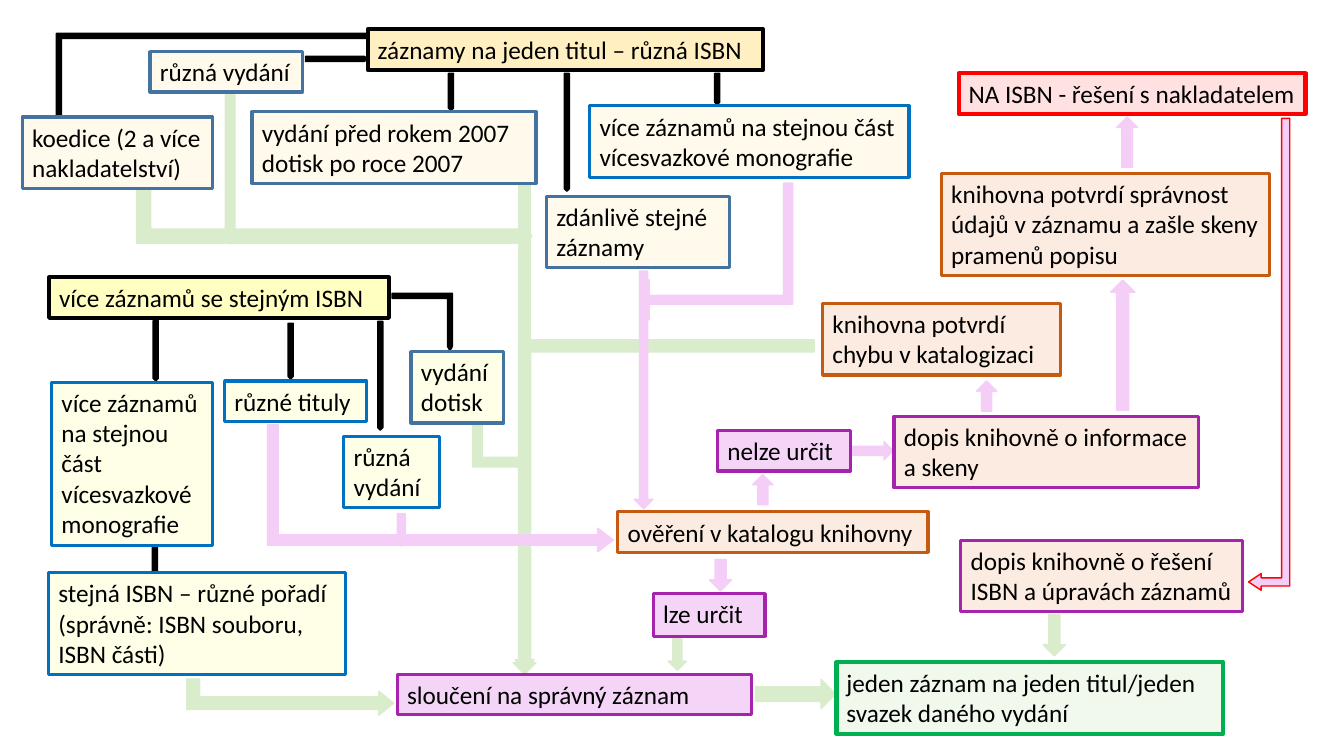
import pptx
import pptx.dml.color
import pptx.enum.shapes
import pptx.enum.text
import pptx.util

Cm = pptx.util.Cm
PRESET = pptx.enum.shapes.MSO_SHAPE
UP, DOWN, RIGHT = PRESET.UP_ARROW, PRESET.DOWN_ARROW, PRESET.RIGHT_ARROW

BLACK, BLUE, STEEL = "000000", "0070C0", "43739E"
PURPLE, ORANGE, RED = "A623AD", "C55A11", "FF0000"
CREAM, IVORY, PEACH, LILAC = "FFFAEB", "FFFFE7", "FCEBE0", "F5D5F7"
GREEN_FLOW, PINK_FLOW = "D9ECCC", "F4CEF6"

# Heights of boxes holding one, two, three and five lines
ONE, TWO, THREE, FIVE = 1.02, 1.8, 2.57, 4.11
THIN = 0.13


def rgb(value):
    return pptx.dml.color.RGBColor.from_string(value)


def place(slide, origin, preset, at, fill, line, weight):
    left, top, width, height = at
    part = slide.shapes.add_shape(
        preset, Cm(origin[0] + left), Cm(origin[1] + top), Cm(width), Cm(height))
    part.shadow.inherit = False
    part.fill.solid()
    part.fill.fore_color.rgb = rgb(fill)
    part.line.color.rgb = rgb(line)
    part.line.width = pptx.util.Pt(weight)
    return part


def step(slide, origin, text, at, fill, line, weight=2.25):
    """A framed step of the procedure."""
    part = place(slide, origin, PRESET.RECTANGLE, at, fill, line, weight)
    frame = part.text_frame
    frame.text = text
    frame.word_wrap = True
    frame.auto_size = pptx.enum.text.MSO_AUTO_SIZE.SHAPE_TO_FIT_TEXT
    frame.vertical_anchor = pptx.enum.text.MSO_ANCHOR.TOP
    for paragraph in frame.paragraphs:
        paragraph.alignment = pptx.enum.text.PP_ALIGN.LEFT
        paragraph.font.name = "Calibri"
        paragraph.font.size = pptx.util.Pt(18)
        paragraph.font.color.rgb = rgb(BLACK)


def arrow(slide, origin, preset, at, color, adjust=(), line=None):
    part = place(slide, origin, preset, at, color, line or color, 1)
    for index, value in enumerate(adjust):
        part.adjustments[index] = value
    return part


def bent(slide, origin, at, color, adjust, turn, flip=None, line=None):
    """An arrow with a right-angled bend."""
    part = arrow(slide, origin, PRESET.BENT_UP_ARROW, at, color, adjust, line)
    part.rotation = turn
    if flip:
        part.element.spPr.get_or_add_xfrm().set(flip, "1")


def branch(slide, origin, preset, at):
    """A thin black arrow from a heading to one of its cases."""
    arrow(slide, origin, preset, at, BLACK, (1, 0.5))


def merging(slide, *origin):
    # Green flow down to the merge and on to the result
    bent(slide, origin, (3.98, 4.56, 7.54, 8.46), GREEN_FLOW, (0.041, 0.032, 0.053), 180)
    for preset, at in [
        (DOWN, (3.93, 0.67, 0.58, 12.32)),
        (DOWN, (7.84, 12.1, 0.46, 0.79)),
        (RIGHT, (10.05, 13.12, 2.01, 0.74)),
    ]:
        arrow(slide, origin, preset, at, GREEN_FLOW)
    step(slide, origin, "sloučení na správný záznam",
         (1.01, 12.99, 8.92, ONE), LILAC, PURPLE)
    step(slide, origin, "jeden záznam na jeden titul/jeden svazek daného vydání",
         (12.08, 12.69, 9.75, TWO), "F1F8EC", "00B050", 3)


def different_isbn(slide, *origin):
    # Flows leaving the cases
    bent(slide, origin, (6.84, -0.09, 2.16, 9.96), GREEN_FLOW, (0.164, 0.24, 0.121), 90)
    arrow(slide, origin, DOWN, (5.06, 1.89, 0.48, 3.76), GREEN_FLOW)
    arrow(slide, origin, DOWN, (15.48, 6.33, 0.48, 5.99), PINK_FLOW, (0.425, 0.5))
    bent(slide, origin, (15.83, 3.92, 3.45, 3.84), PINK_FLOW,
         (0.065, 0.148, 0.066), 90, "flipV")
    # Branches from the heading
    bent(slide, origin, (0.95, 0.34, 7.77, 2.11), BLACK, (0.06, 0.016, 0.024), 180)
    branch(slide, origin, RIGHT, (7.2, 0.92, 1.55, THIN))
    for left, length in [(10.8, 0.94), (13.72, 2.97), (17.51, 0.79)]:
        branch(slide, origin, DOWN, (left, 1.35, THIN, length))
    # Heading and cases
    step(slide, origin, "záznamy na jeden titul – různá ISBN",
         (8.77, 0.24, 9.96, ONE), "FFEFC1", BLACK, 3)
    for text, at, line in [
        ("koedice (2 a více nakladatelství)", (0.06, 2.45, 4.8, TWO), STEEL),
        ("různá vydání", (3.28, 0.8, 3.84, ONE), STEEL),
        ("vydání před rokem 2007\ndotisk po roce 2007", (5.85, 2.32, 7.16, TWO), STEEL),
        ("zdánlivě stejné záznamy", (13.27, 4.45, 4.62, TWO), STEEL),
        ("více záznamů na stejnou část vícesvazkové monografie",
         (14.36, 2.17, 8.05, TWO), BLUE),
    ]:
        step(slide, origin, text, at, CREAM, line)


def same_isbn(slide, *origin):
    # Flows leaving the cases
    bent(slide, origin, (10.96, 4.17, 1.22, 1.32), GREEN_FLOW, (0.199, 0.24, 0.121), 90)
    bent(slide, origin, (8.5, 1.45, 3.2, 8.71), PINK_FLOW, (0.082, 0.093, 0.123), 90)
    arrow(slide, origin, DOWN, (8.91, 6.45, 0.41, 0.81), PINK_FLOW)
    bent(slide, origin, (5.86, 8.46, 0.91, 5.21), GREEN_FLOW, (0.35, 0.328, 0.408), 90)
    # Branches from the heading
    bent(slide, origin, (8.88, 0.89, 1.52, 1.45), BLACK,
         (0.087, 0.041, 0.075), 180, "flipH")
    for left, top, length in [
        (2.86, 1.58, 1.52), (6.26, 1.65, 1.4), (8.52, 1.6, 2.74), (2.84, 7.27, 0.71),
    ]:
        branch(slide, origin, DOWN, (left, top, THIN, length))
    # Heading and cases
    step(slide, origin, "více záznamů se stejným ISBN",
         (0.24, 0.49, 8.56, ONE), "FFFFC1", BLACK, 3)
    for text, at, line in [
        ("více záznamů na stejnou část vícesvazkové monografie",
         (0.3, 3.13, 4.06, FIVE), BLUE),
        ("stejná ISBN – různé pořadí\n(správně: ISBN souboru, ISBN části)",
         (0.22, 7.93, 7.49, THREE), BLUE),
        ("různé tituly", (4.66, 3.1, 3.58, ONE), BLUE),
        ("vydání\ndotisk", (9.36, 2.36, 2.34, TWO), STEEL),
        ("různá vydání", (7.66, 4.5, 2.41, TWO), BLUE),
    ]:
        step(slide, origin, text, at, IVORY, line)


def library_check(slide, *origin):
    for preset, at in [
        (UP, (3.97, 4.46, 0.51, 0.76)),
        (DOWN, (2.88, 6.6, 0.56, 0.79)),
        (RIGHT, (6.49, 3.63, 1.02, 0.46)),
        (UP, (9.61, 2.1, 0.51, 0.76)),
    ]:
        arrow(slide, origin, preset, at, PINK_FLOW)
    for text, at, fill, line in [
        ("ověření v katalogu knihovny", (0.57, 5.4, 7.82, ONE), PEACH, ORANGE),
        ("lze určit", (1.46, 7.46, 2.82, 1.07), LILAC, PURPLE),
        ("nelze určit", (3.08, 3.35, 3.35, ONE), LILAC, PURPLE),
        ("dopis knihovně o informace a skeny", (7.53, 2.99, 7.67, TWO), PEACH, PURPLE),
        ("knihovna potvrdí chybu v katalogizaci", (5.73, 0.15, 5.99, TWO), PEACH, ORANGE),
    ]:
        step(slide, origin, text, at, fill, line)


def isbn_agency(slide, *origin):
    arrow(slide, origin, UP, (4.64, 1.45, 0.53, 1.27), PINK_FLOW)
    arrow(slide, origin, UP, (4.49, 5.56, 0.61, 3.28), PINK_FLOW)
    arrow(slide, origin, DOWN, (2.79, 13.99, 0.56, 1.04), GREEN_FLOW)
    bent(slide, origin, (2.54, 6.91, 11.89, 1.04), PINK_FLOW,
         (0.199, 0.202, 0.307), 270, "flipH", RED)
    step(slide, origin, "NA ISBN - řešení s nakladatelem",
         (0.66, 0.35, 8.74, ONE), "FFE1E1", RED, 3)
    step(slide, origin, "knihovna potvrdí správnost údajů v záznamu a zašle skeny pramenů popisu",
         (0.22, 2.87, 8.28, THREE), PEACH, ORANGE)
    step(slide, origin, "dopis knihovně o řešení ISBN a úpravách záznamů",
         (0.71, 12.11, 7.11, TWO), PEACH, PURPLE)


def main():
    deck = pptx.Presentation()
    deck.slide_width, deck.slide_height = Cm(33.87), Cm(19.05)
    slide = deck.slides.add_slide(deck.slide_layouts[6])
    merging(slide, 9, 4)
    different_isbn(slide, 0.5, 0.5)
    same_isbn(slide, 1, 6.5)
    library_check(slide, 15, 7.5)
    isbn_agency(slide, 23.5, 1.5)
    deck.save("out.pptx")


if __name__ == "__main__":
    main()
